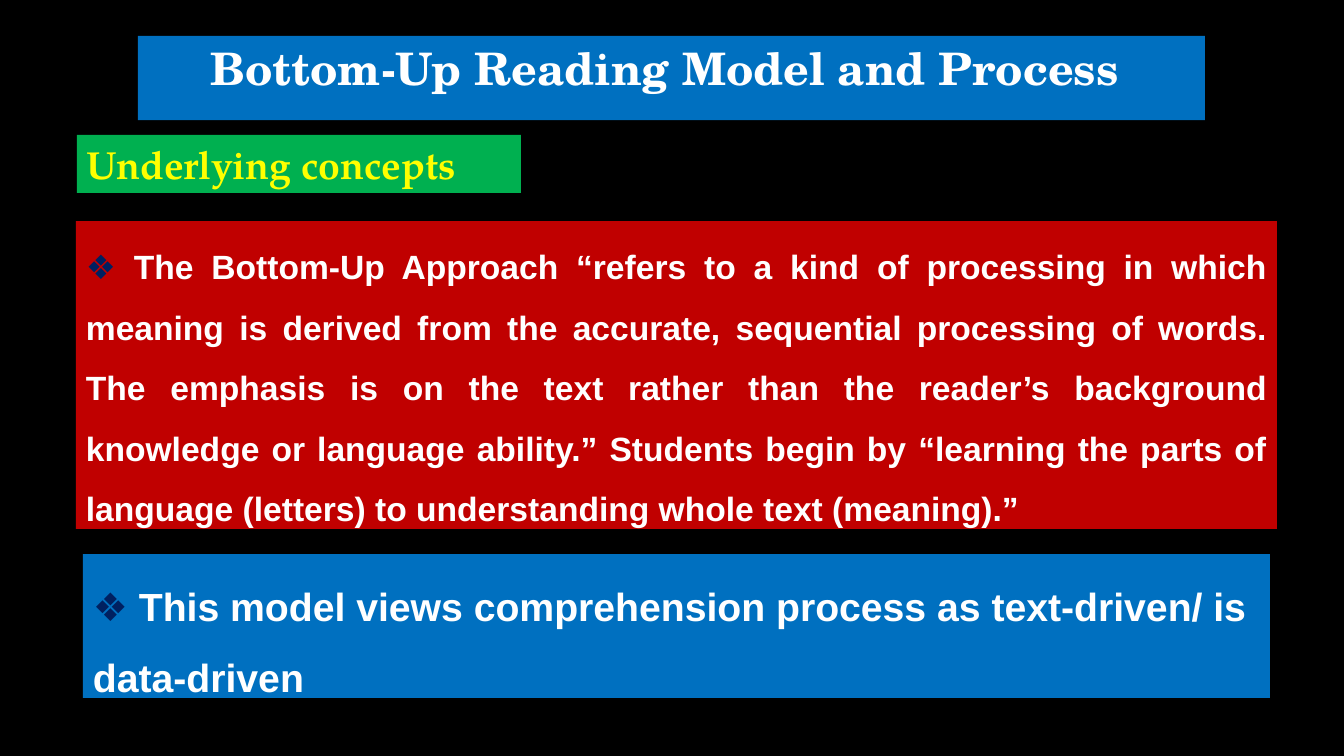
from pptx import Presentation
from pptx.dml.color import RGBColor
from pptx.enum.text import MSO_ANCHOR, MSO_AUTO_SIZE, PP_ALIGN
from pptx.util import Pt

TOP = MSO_ANCHOR.TOP
GROW = MSO_AUTO_SIZE.SHAPE_TO_FIT_TEXT
LEFT, CENTER, JUSTIFY = PP_ALIGN.LEFT, PP_ALIGN.CENTER, PP_ALIGN.JUSTIFY
PX = 914400 / 100.8

THEME = {
    "black": "000000", "white": "FFFFFF", "blue": "0070C0", "red": "C00000",
    "green": "00B050", "yellow": "FFFF00", "navy": "002060",
    "title": ("TeX Gyre Schola", 32),
    "heading": ("TeX Gyre Pagella", 28),
    "body": ("Arial", 24),
    "point": ("Arial", 28),
}


def px(n):
    return round(n * PX)


def rgb(name):
    return RGBColor.from_string(THEME[name])


prs = Presentation()
prs.slide_width, prs.slide_height = px(1344), px(756)
s = prs.slides.add_slide(prs.slide_layouts[5])
s.background.fill.solid()
s.background.fill.fore_color.rgb = rgb("black")

BODY_SPACING = {"line_spacing": 1.5, "space_after": Pt(8)}
# box, fill, type style, paragraph format, runs of (text, colour)
panels = [
    ((138, 36, 1067, 64), "blue", "title", {"alignment": CENTER},
     [("Bottom-Up Reading Model and Process ", "white")]),
    ((76, 221, 1201, 308), "red", "body", {"alignment": JUSTIFY, **BODY_SPACING},
     [("❖ ", "navy"),
      ("The Bottom-Up Approach “refers to a kind of processing in which meaning "
       "is derived from the accurate, sequential processing of words. The emphasis "
       "is on the text rather than the reader’s background knowledge or language "
       "ability.” Students begin by “learning the parts of language (letters) to "
       "understanding whole text (meaning).”", "white")]),
    ((77, 135, 444, 58), "green", "heading", {"alignment": LEFT},
     [("Underlying concepts", "yellow")]),
    ((83, 554, 1187, 144), "blue", "point", {"alignment": LEFT, **BODY_SPACING},
     [("❖", "navy"),
      (" This model views comprehension process as text-driven/ is data-driven",
       "white")]),
]

for box, fill, style, para_format, runs in panels:
    place = [px(n) for n in box]
    if style == "title":
        sp = s.shapes.title
        sp.left, sp.top, sp.width, sp.height = place
    else:
        sp = s.shapes.add_textbox(*place)
    sp.fill.solid()
    sp.fill.fore_color.rgb = rgb(fill)

    tf = sp.text_frame
    for name, value in {"word_wrap": True, "auto_size": GROW,
                        "vertical_anchor": TOP}.items():
        setattr(tf, name, value)
    p = tf.paragraphs[0]
    for name, value in para_format.items():
        setattr(p, name, value)

    font_name, size = THEME[style]
    for text, color in runs:
        r = p.add_run()
        r.text = text
        for name, value in {"name": font_name, "size": Pt(size), "bold": True}.items():
            setattr(r.font, name, value)
        r.font.color.rgb = rgb(color)

prs.save("out.pptx")
